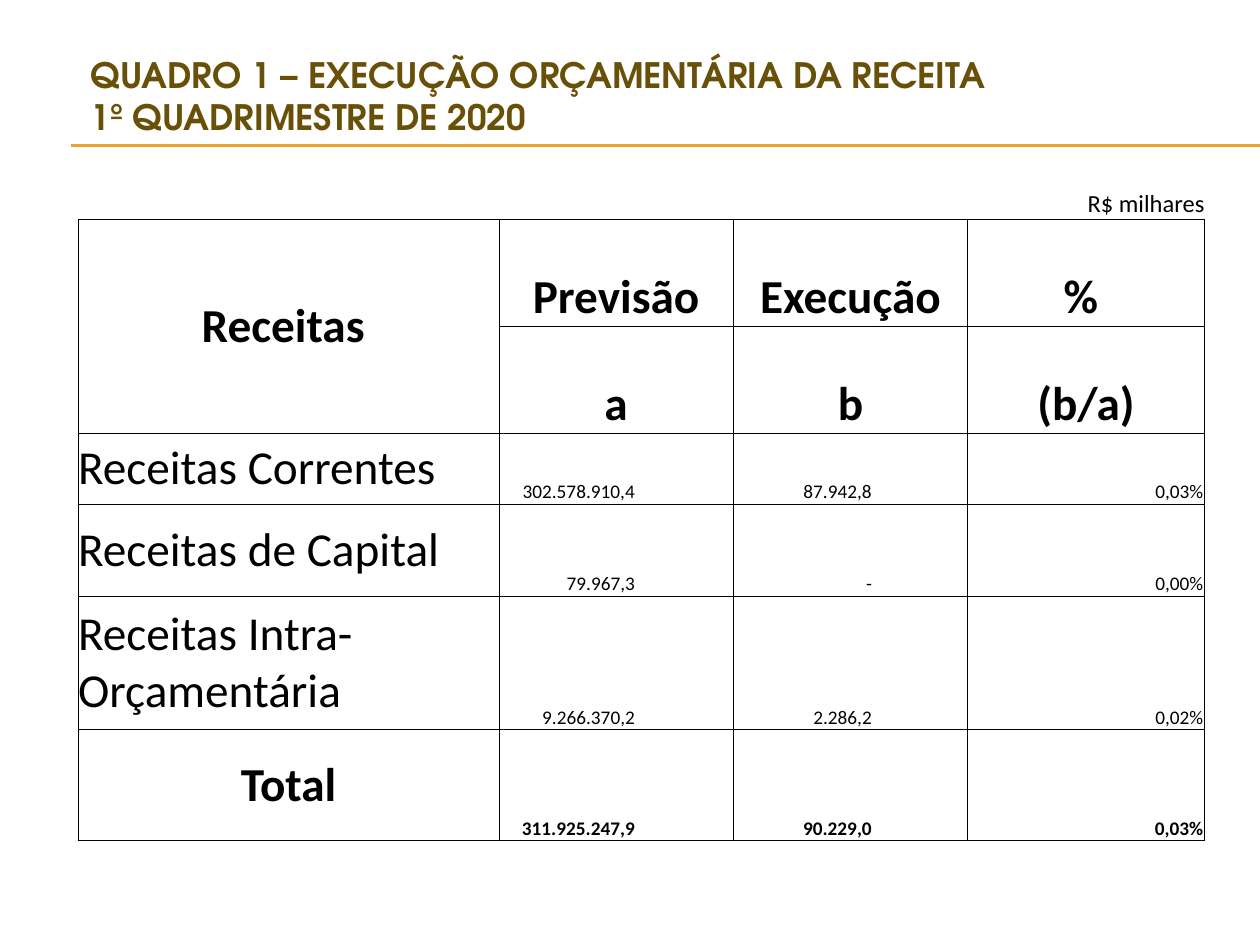
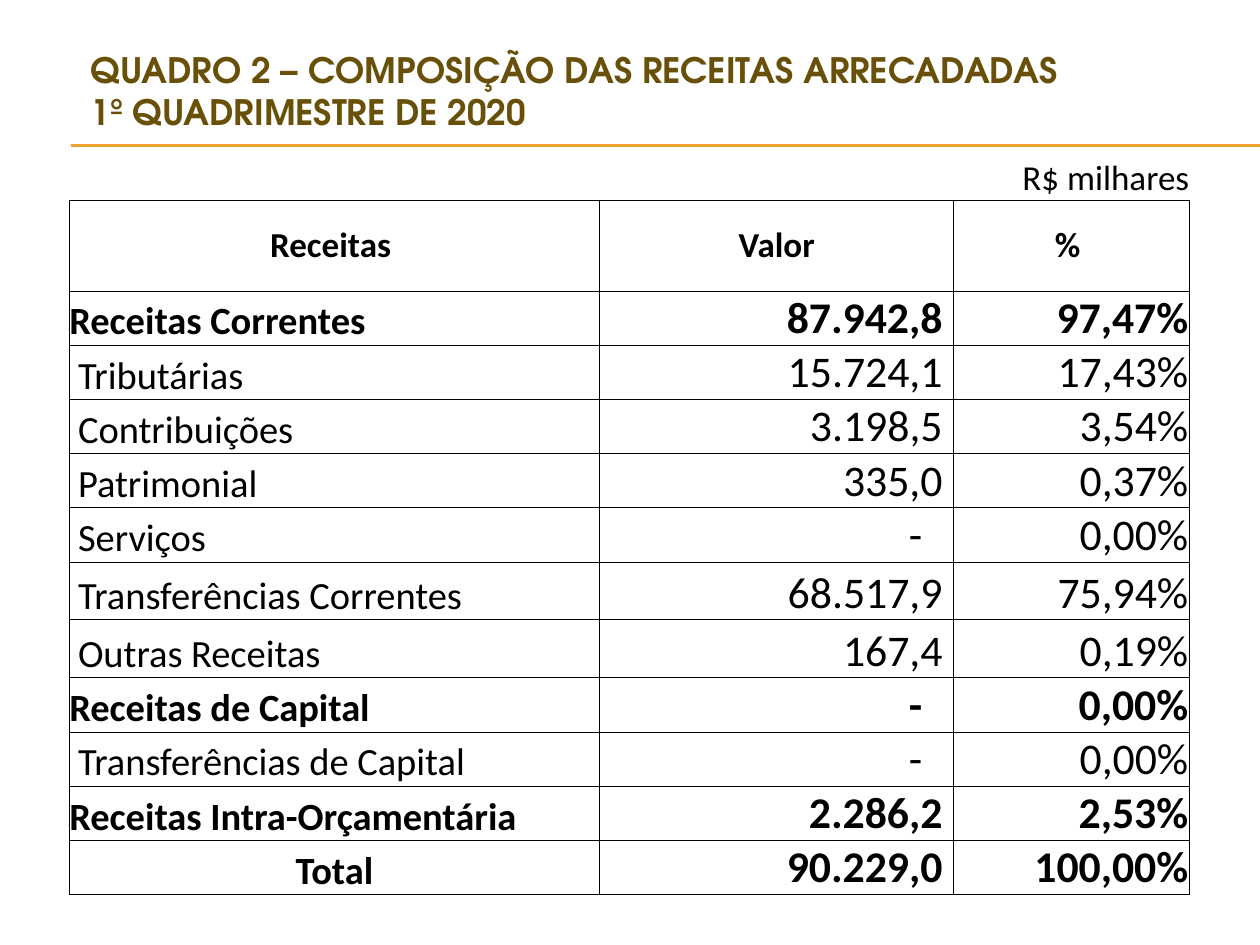
from lxml import etree
from pptx import Presentation
from pptx.dml.color import RGBColor
from pptx.enum.shapes import MSO_CONNECTOR
from pptx.enum.text import MSO_ANCHOR, MSO_AUTO_SIZE, PP_ALIGN
from pptx.oxml.ns import qn
from pptx.util import Inches, Pt

GOLD = RGBColor(0xF0, 0xA2, 0x2E)
BROWN = RGBColor(0x69, 0x50, 0x08)
BLACK = RGBColor(0, 0, 0)
HEAD_FONT = "TeX Gyre Adventor"
BODY_FONT = "Calibri"
LEFT, CENTER, RIGHT = PP_ALIGN.LEFT, PP_ALIGN.CENTER, PP_ALIGN.RIGHT
MIDDLE, BOTTOM = MSO_ANCHOR.MIDDLE, MSO_ANCHOR.BOTTOM
STRAIGHT = MSO_CONNECTOR.STRAIGHT
NO_FIT = MSO_AUTO_SIZE.NONE

TERM = "1º QUADRIMESTRE DE 2020"
UNIT = "R$ milhares"

BUDGET = [
    ("Receitas Correntes", "302.578.910,4", "87.942,8", "0,03%"),
    ("Receitas de Capital", "79.967,3", "-", "0,00%"),
    ("Receitas Intra-Orçamentária", "9.266.370,2", "2.286,2", "0,02%"),
    ("Total", "311.925.247,9", "90.229,0", "0,03%"),
]
INCOME = [
    ("Receitas Correntes", "87.942,8", "97,47%"),
    ("Tributárias", "15.724,1", "17,43%"),
    ("Contribuições", "3.198,5", "3,54%"),
    ("Patrimonial", "335,0", "0,37%"),
    ("Serviços", "-", "0,00%"),
    ("Transferências Correntes", "68.517,9", "75,94%"),
    ("Outras Receitas", "167,4", "0,19%"),
    ("Receitas de Capital", "-", "0,00%"),
    ("Transferências de Capital", "-", "0,00%"),
    ("Receitas Intra-Orçamentária", "2.286,2", "2,53%"),
    ("Total", "90.229,0", "100,00%"),
]
GROUPS = {"Receitas Correntes", "Receitas de Capital",
          "Receitas Intra-Orçamentária", "Total"}


def style(run, text, size, font, color, bold):
    run.text = text
    run.font.size = Pt(size)
    run.font.name = font
    run.font.bold = bold
    run.font.color.rgb = color


def add_rules(slide, layout):
    for y in (1.15, 1.16):
        rule = slide.shapes.add_connector(
            STRAIGHT, Inches(0.56), Inches(y), Inches(10), Inches(y))
        rule.line.color.rgb = GOLD
        rule.line.width = Pt(0.75)
        etree.SubElement(rule.element.spPr, qn("a:effectLst"))
        layout.shapes.element.append(rule.element)


def add_title(slide, text, width, height):
    title = slide.shapes.title
    title.left, title.top = Inches(0.62), Inches(0.47)
    title.width, title.height = Inches(width), Inches(height)
    frame = title.text_frame
    frame.auto_size = NO_FIT
    frame.word_wrap = True
    frame.vertical_anchor = MIDDLE
    para = frame.paragraphs[0]
    para.alignment = LEFT
    style(para.add_run(), text, 20, HEAD_FONT, BROWN, True)
    para.add_line_break()
    style(para.add_run(), TERM, 20, HEAD_FONT, BROWN, True)


def set_edges(cell, sides):
    props = cell._tc.get_or_add_tcPr()
    for pos, side in enumerate(sides):
        edge = etree.Element(qn(f"a:ln{side}"), w=str(Pt(0.5)))
        fill = etree.SubElement(edge, qn("a:solidFill"))
        etree.SubElement(fill, qn("a:srgbClr"), val=str(BLACK))
        props.insert(pos, edge)


def add_grid(slide, left, top, cols, rows):
    frame = slide.shapes.add_table(
        len(rows), len(cols), Inches(left), Inches(top),
        Inches(sum(cols)), Inches(sum(rows)))
    table = frame.table
    table.first_row = table.horz_banding = False
    for col, width in zip(table.columns, cols):
        col.width = Inches(width)
    for num, (row, height) in enumerate(zip(table.rows, rows)):
        row.height = Inches(height)
        for cell in row.cells:
            cell.margin_left = cell.margin_right = 0
            cell.margin_top = cell.margin_bottom = 0
            cell.fill.background()
            set_edges(cell, "LRTB" if num else "B")
    return table


def put(cell, text, size, bold=False, align=LEFT, anchor=BOTTOM,
        left=0, right=0):
    cell.vertical_anchor = anchor
    cell.margin_left, cell.margin_right = Inches(left), Inches(right)
    para = cell.text_frame.paragraphs[0]
    para.alignment = align
    style(para.add_run(), text, size, BODY_FONT, BLACK, bold)


def fill_budget(slide):
    table = add_grid(slide, 0.62, 1.23, [3.34, 1.86, 1.86, 1.88],
                     [0.51, 0.85, 0.85, 0.56, 0.73, 1.06, 0.88])
    put(table.cell(0, 3), UNIT, 14, align=RIGHT)
    table.cell(1, 0).merge(table.cell(2, 0))
    put(table.cell(1, 0), "Receitas ", 27, True, CENTER, MIDDLE)
    heads = [("Previsão", "Execução", "% "), ("a", "b", "(b/a)")]
    for row, texts in enumerate(heads, 1):
        for col, text in enumerate(texts, 1):
            put(table.cell(row, col), text, 27, True, CENTER)
    for row, (name, *values) in enumerate(BUDGET, 3):
        total = name == "Total"
        put(table.cell(row, 0), name, 27, total,
            CENTER if total else LEFT, MIDDLE)
        for col, (text, pad) in enumerate(zip(values, (0.78, 0.76, 0.01)), 1):
            put(table.cell(row, col), text, 11, total, RIGHT, right=pad)


def fill_income(slide):
    rows = [0.34, 0.72] + [0.43] * 5 + [0.46] * 2 + [0.43] * 4
    table = add_grid(slide, 0.55, 1.25, [4.21, 0.96, 1.85, 1.87], rows)
    put(table.cell(0, 3), UNIT, 20, align=RIGHT)
    for row in range(1, len(rows)):
        table.cell(row, 1).merge(table.cell(row, 2))
    for col, text in ((0, "Receitas "), (1, "Valor"), (3, "% ")):
        put(table.cell(1, col), text, 20, True, CENTER, MIDDLE)
    for row, (name, value, share) in enumerate(INCOME, 2):
        bold = name in GROUPS
        put(table.cell(row, 0), name, 22, bold,
            CENTER if name == "Total" else LEFT, left=0 if bold else 0.07)
        put(table.cell(row, 1), value, 25, bold, RIGHT,
            right=0.25 if value == "-" else 0.09)
        put(table.cell(row, 3), share, 25, bold, RIGHT, right=0.01)


def main():
    deck = Presentation()
    deck.slide_width, deck.slide_height = Inches(10), Inches(7.5)
    layout = deck.slide_layouts[5]
    first = deck.slides.add_slide(layout)
    add_rules(first, layout)
    add_title(first, "QUADRO 1 – EXECUÇÃO ORÇAMENTÁRIA DA RECEITA", 8.5, 0.58)
    fill_budget(first)
    second = deck.slides.add_slide(layout)
    add_title(second, "QUADRO 2 – COMPOSIÇÃO DAS RECEITAS ARRECADADAS",
              8.98, 0.5)
    fill_income(second)
    deck.save("out.pptx")


if __name__ == "__main__":
    main()
